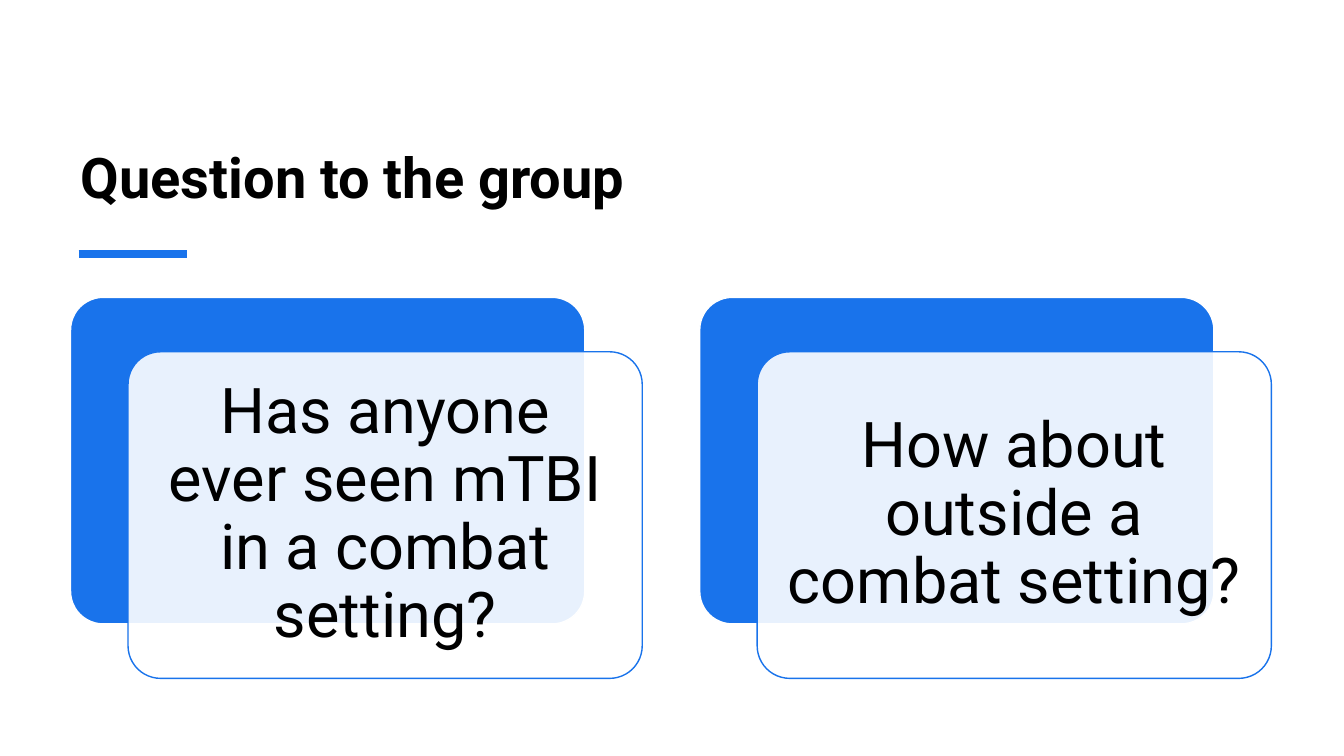
from lxml import etree
from pptx import Presentation
from pptx.dml.color import RGBColor
from pptx.enum.shapes import MSO_CONNECTOR as Connector, MSO_SHAPE as Shape
from pptx.enum.text import MSO_ANCHOR as Anchor, MSO_AUTO_SIZE as AutoSize, PP_ALIGN as Align
from pptx.oxml.ns import qn
from pptx.util import Inches, Pt

BLUE, WHITE, BLACK = "1973EB", "FFFFFF", "000000"
QUESTIONS = [
    "Has anyone ever seen mTBI in a combat setting?",
    "How about outside a combat setting?",
]


def color(value):
    """Turn a hex string into a colour."""
    return RGBColor.from_string(value)


def write(shape, text, size, align, anchor, bold=False):
    """Put one formatted paragraph into a shape."""
    frame = shape.text_frame
    frame.text = text
    frame.word_wrap = True
    frame.auto_size = AutoSize.NONE
    frame.vertical_anchor = anchor
    para = frame.paragraphs[0]
    para.alignment = align
    para.line_spacing = 0.9
    font = para.runs[0].font
    font.name, font.size, font.bold = "Roboto", Pt(size), bold
    font.color.rgb = color(BLACK)


def add_heading(page, left, top, width, height):
    """Place the title and the accent line below it."""
    title = page.shapes.title
    title.left, title.top = Inches(left), Inches(top)
    title.width, title.height = Inches(width), Inches(height)
    write(title, "Question to the group", 40, Align.LEFT, Anchor.BOTTOM, bold=True)
    start, level = left + 0.08, top + height + 0.38
    accent = page.shapes.add_connector(
        Connector.STRAIGHT, Inches(start), Inches(level), Inches(start + 1.07), Inches(level)
    )
    accent.line.color.rgb = color(BLUE)
    accent.line.width = Pt(6)
    etree.SubElement(accent._element.spPr, qn("a:effectLst"))


def add_panel(page, left, top, width, height, fill, line):
    """Add one rounded panel and return it."""
    panel = page.shapes.add_shape(
        Shape.ROUNDED_RECTANGLE, Inches(left), Inches(top), Inches(width), Inches(height)
    )
    panel.adjustments[0] = 0.1
    panel.shadow.inherit = False
    panel.fill.solid()
    panel.fill.fore_color.rgb = color(fill)
    panel.line.color.rgb = color(line)
    panel.line.width = Pt(1)
    return panel


def add_question_card(page, left, top, width, height, question):
    """Place a blue panel with a translucent question panel overlapping it."""
    shift_x, shift_y = 0.57, 0.54
    size = width - shift_x, height - shift_y
    add_panel(page, left, top, *size, BLUE, WHITE)
    front = add_panel(page, left + shift_x, top + shift_y, *size, WHITE, BLUE)
    tint = front.fill._xPr.find(qn("a:solidFill"))[0]
    etree.SubElement(tint, qn("a:alpha"), val="90000")
    write(front, question, 45, Align.CENTER, Anchor.MIDDLE)
    frame = front.text_frame
    frame.margin_left = frame.margin_right = Inches(0.19)
    frame.margin_top = frame.margin_bottom = Inches(0.19)


def main():
    """Build the slide and save the deck."""
    deck = Presentation()
    deck.slide_width, deck.slide_height = Inches(13.33), Inches(7.5)
    page = deck.slides.add_slide(deck.slide_layouts[5])
    add_heading(page, 0.7, 0.62, 11.91, 1.52)
    for index, question in enumerate(QUESTIONS):
        add_question_card(page, 0.7 + 6.24 * index, 2.95, 5.67, 3.78, question)
    deck.save("out.pptx")


if __name__ == "__main__":
    main()
